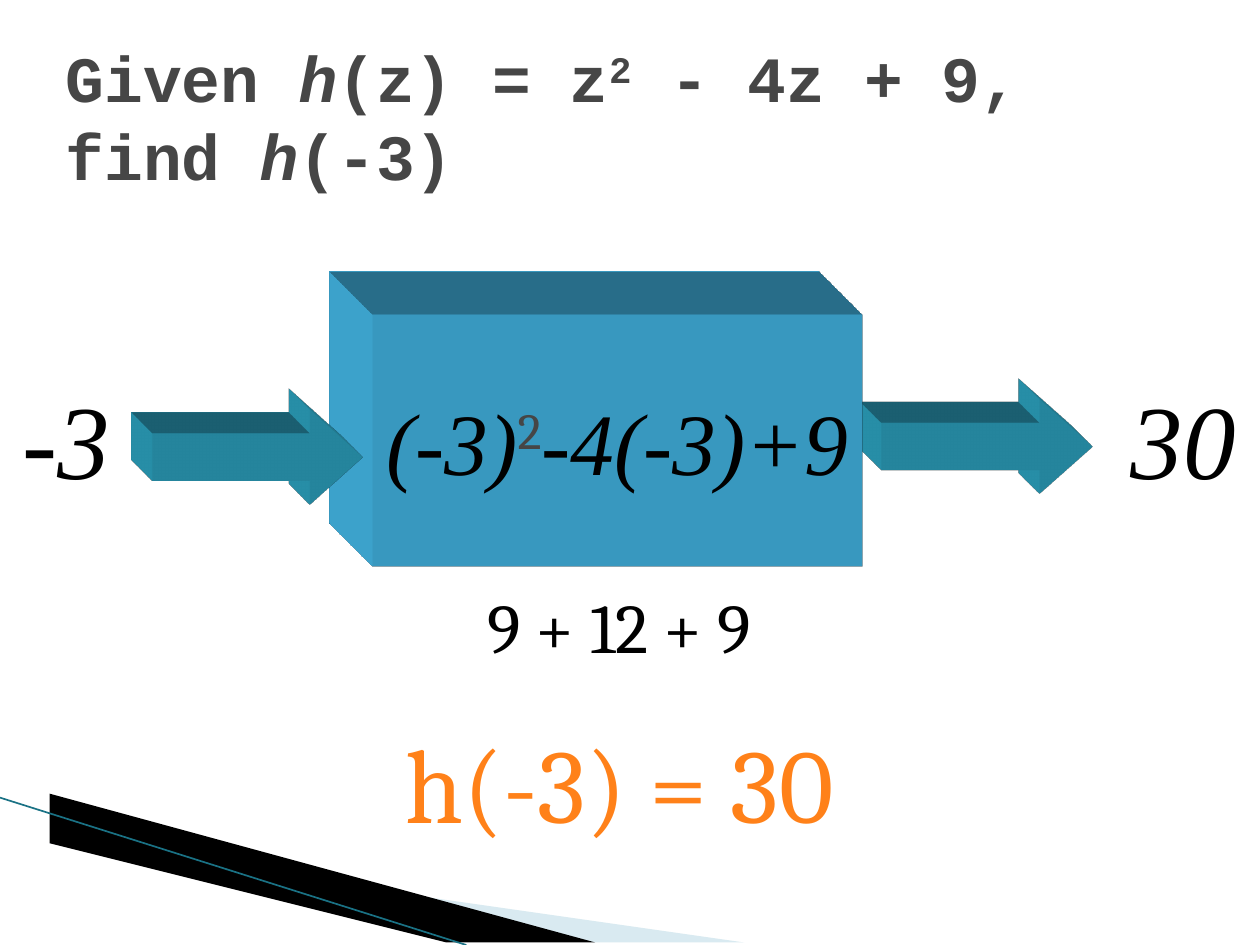
from lxml import etree
from pptx import Presentation
from pptx import util as u
from pptx.dml.color import RGBColor
from pptx.enum import shapes, text
from pptx.oxml import parse_xml
from pptx.oxml.ns import nsdecls, qn

COLORS = {
    "title": "464646", "ink": "000000", "answer": "FF8119", "box": "44B9E8",
    "arrow": "2DA2BF", "pale": "A0CBDC", "edge": "1A7285",
}
TITLE = {"name": "Courier New", "size": u.Pt(36.9), "bold": True, "italic": False}
TITLE_VAR = {**TITLE, "italic": True}
VALUE = {"name": "Times New Roman", "size": u.Pt(60), "italic": True}
RULE = {**VALUE, "size": u.Pt(50)}
POWER = {"name": "Cambria", "size": u.Pt(50), "italic": False}
STEP = {"name": "Cambria", "size": u.Pt(40)}
ANSWER = {**STEP, "size": u.Pt(60)}


class FunctionSlide:
    def __init__(self, slide):
        self.slide = slide
        self.shapes = slide.shapes

    def color(self, name):
        return RGBColor.from_string(COLORS[name])

    def fill(self, shape, color):
        shape.shadow.inherit = False
        shape.fill.solid()
        shape.fill.fore_color.rgb = self.color(color)
        shape.line.fill.background()

    def set_text(self, shape, runs, align, anchor, wrap):
        frame = shape.text_frame
        settings = {"word_wrap": wrap, "vertical_anchor": anchor,
                    "auto_size": text.MSO_AUTO_SIZE.NONE}
        for key, value in settings.items():
            setattr(frame, key, value)
        paragraph = frame.paragraphs[0]
        paragraph.alignment = align
        for words, font, color, raised in runs:
            run = paragraph.add_run()
            run.text = words
            for key, value in font.items():
                setattr(run.font, key, value)
            run.font.color.rgb = self.color(color)
            if raised:
                run._r.get_or_add_rPr().set("baseline", "30000")

    def title(self, box, runs):
        heading = self.shapes.title
        for side, length in zip(("left", "top", "width", "height"), box):
            setattr(heading, side, u.Cm(length))
        self.set_text(heading, runs, text.PP_ALIGN.LEFT, text.MSO_ANCHOR.MIDDLE, True)

    def label(self, box, words, font, color="ink", wrap=True):
        label = self.shapes.add_textbox(*map(u.Cm, box))
        self.set_text(label, [(words, font, color, False)],
                      text.PP_ALIGN.CENTER, text.MSO_ANCHOR.TOP, wrap)

    def block(self, kind, box, color, depth):
        block = self.shapes.add_shape(kind, *map(u.Cm, box))
        self.fill(block, color)
        properties = block._element.spPr
        properties.append(parse_xml(
            f'<a:scene3d {nsdecls("a")}><a:camera prst="legacyObliqueTopLeft"/>'
            '<a:lightRig rig="legacyFlat3" dir="b"/></a:scene3d>'))
        properties.append(parse_xml(
            f'<a:sp3d {nsdecls("a")} extrusionH="{u.Cm(depth)}" prstMaterial="legacyMatte">'
            f'<a:extrusionClr><a:srgbClr val="{COLORS[color]}"/></a:extrusionClr></a:sp3d>'))
        return block

    def arrow(self, left, top):
        arrow = self.block(shapes.MSO_SHAPE.RIGHT_ARROW, (left, top, 4.24, 1.91), "arrow", 1.2)
        arrow.adjustments[1] = 0.56

    def machine(self, box, runs):
        machine = self.block(shapes.MSO_SHAPE.RECTANGLE, box, "box", 2.46)
        self.set_text(machine, runs, text.PP_ALIGN.CENTER, text.MSO_ANCHOR.MIDDLE, False)

    def wedge(self, points, color, opacity=100):
        builder = self.shapes.build_freeform(*points[0], scale=u.Cm(1))
        builder.add_line_segments(points[1:], close=True)
        wedge = builder.convert_to_shape()
        self.fill(wedge, color)
        if opacity < 100:
            tone = wedge._element.spPr.find(qn("a:solidFill"))[0]
            etree.SubElement(tone, qn("a:alpha")).set("val", str(opacity * 1000))

    def line(self, ends, color, width):
        line = self.shapes.add_connector(shapes.MSO_CONNECTOR.STRAIGHT, *map(u.Cm, ends))
        line.line.color.rgb = self.color(color)
        line.line.width = u.Pt(width)
        etree.SubElement(line._element.spPr, qn("a:effectLst"))


def main():
    deck = Presentation()
    deck.slide_width, deck.slide_height = u.Cm(25.4), u.Cm(19.05)
    page = FunctionSlide(deck.slides.add_slide(deck.slide_layouts[5]))

    page.wedge([(1.4, 16.54), (15.11, 19.05), (11.58, 19.05), (1.4, 16.51)], "pale", 40)
    page.wedge([(1.35, 16.48), (11.55, 19.05), (9.4, 19.05), (1.37, 16.51)], "ink")
    page.line((0, 16.08, 9.4, 19.05), "edge", 0.95)

    page.title((1.07, 0.64, 23.06, 3.38), [
        ("Given ", TITLE, "title", False),
        ("h", TITLE_VAR, "title", False),
        ("(z) = z", TITLE, "title", False),
        ("2", TITLE, "title", True),
        (" - 4z + 9, find ", TITLE, "title", False),
        ("h", TITLE_VAR, "title", False),
        ("(-3)", TITLE, "title", False),
    ])

    page.arrow(17.78, 8.05)
    page.machine((7.52, 6.35, 9.86, 5.08), [
        ("(-3)", RULE, "ink", False),
        ("2", POWER, "title", True),
        ("-4(-3)+9", RULE, "ink", False),
    ])
    page.label((0.2, 7.42, 2.29, 2.79), "-3", VALUE, wrap=False)
    page.label((22.28, 7.42, 3.15, 2.79), "30", VALUE)
    page.arrow(3.07, 8.26)
    page.label((7.62, 11.63, 9.73, 1.96), "9 + 12 + 9", STEP)
    page.label((7.62, 14.35, 9.73, 2.79), "h(-3) = 30", ANSWER, "answer")

    deck.save("out.pptx")


if __name__ == "__main__":
    main()
